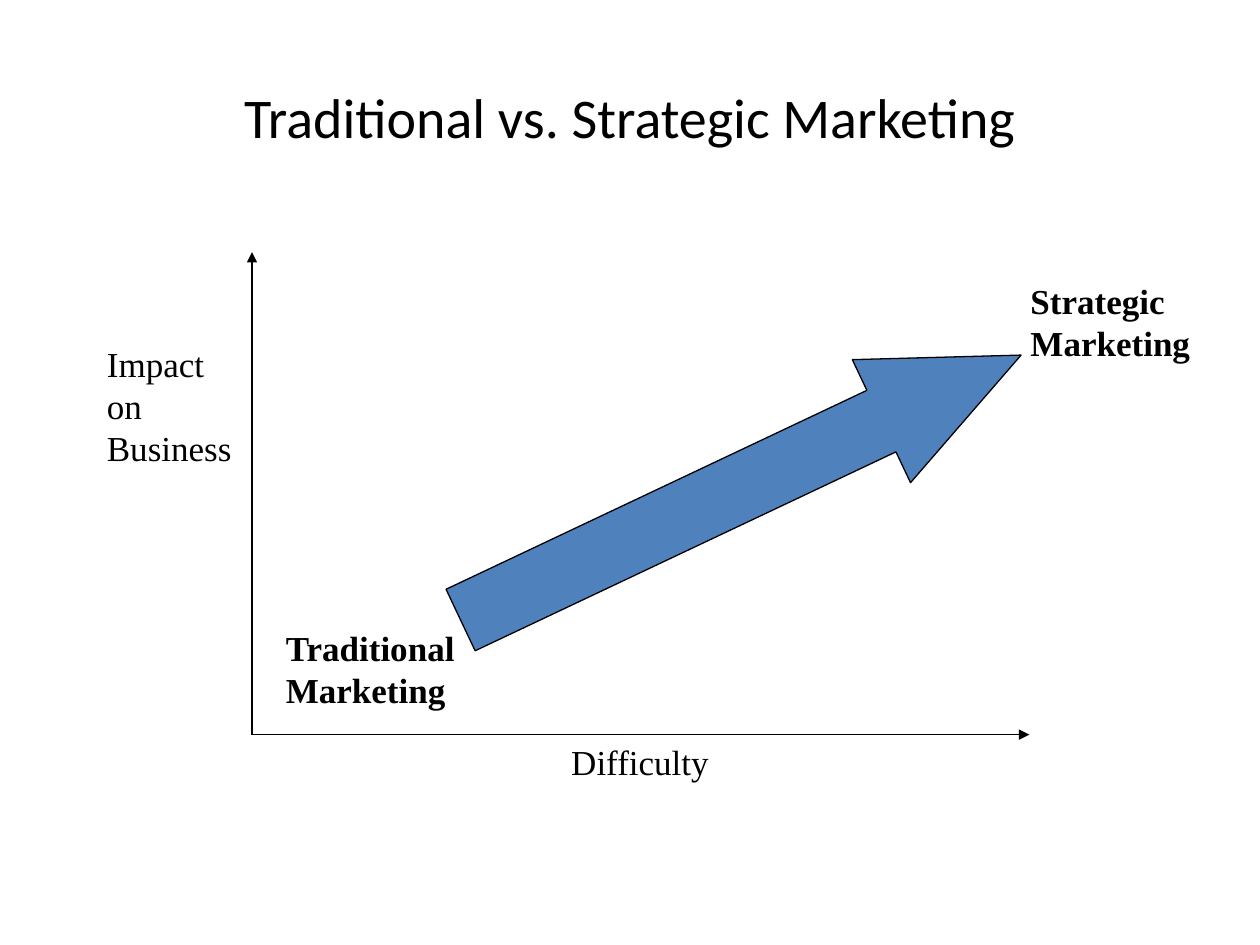
from lxml import etree
from pptx import Presentation
from pptx.dml.color import RGBColor
from pptx.enum.shapes import MSO_CONNECTOR, MSO_SHAPE
from pptx.enum.text import MSO_ANCHOR, PP_ALIGN
from pptx.oxml.ns import qn
from pptx.util import Inches, Pt

THEME = {
    "ink": RGBColor(0x00, 0x00, 0x00),
    "accent": RGBColor(0x4F, 0x81, 0xBD),
    "title_font": "Calibri",
    "label_font": "Times New Roman",
    "title_size": 32,
    "label_size": 20,
    "line_width": 0.75,
}

# Content: text, (left, top, width, height), format
TITLE = ("Traditional vs. Strategic Marketing", (0.5, 0.3, 9, 1.25))
LABELS = [
    ("Strategic Marketing", (8.08, 2.17, 1.59, 0.77), {"bold": True}),
    ("Traditional Marketing", (2.17, 4.92, 1.58, 0.77), {"bold": True}),
    ("Impact\von Business", (0.75, 2.67, 1.33, 1.1), {}),
    ("Difficulty", (3.33, 5.83, 3.5, 0.43), {"align": PP_ALIGN.CENTER}),
]
ORIGIN = (2, 5.83)
AXIS_ENDS = [(2, 2), (8.17, 5.83)]
ARROW_PLACE = (3.42, 3.33, 4.92, 1.08)
ARROW_ROTATION = 334.7
ARROW_SHAPE = (0.5, 1.135)


def add_text(page, text, place, *, font=THEME["label_font"],
             size=THEME["label_size"], bold=False,
             align=PP_ALIGN.LEFT, anchor=MSO_ANCHOR.TOP):
    box = page.shapes.add_textbox(*map(Inches, place))
    frame = box.text_frame
    frame.word_wrap = True
    frame.vertical_anchor = anchor
    para = frame.paragraphs[0]
    para.text = text
    para.alignment = align
    for span in para.runs:
        span.font.name = font
        span.font.size = Pt(size)
        span.font.bold = bold
        span.font.color.rgb = THEME["ink"]


def style_line(line):
    line.color.rgb = THEME["ink"]
    line.width = Pt(THEME["line_width"])


def add_axis(page, start, end):
    axis = page.shapes.add_connector(
        MSO_CONNECTOR.STRAIGHT, *map(Inches, start + end))
    style_line(axis.line)
    etree.SubElement(axis.line._get_or_add_ln(), qn("a:tailEnd"), type="triangle")
    etree.SubElement(axis._element.spPr, qn("a:effectLst"))


def add_growth_arrow(page):
    arrow = page.shapes.add_shape(
        MSO_SHAPE.RIGHT_ARROW, *map(Inches, ARROW_PLACE))
    arrow.rotation = ARROW_ROTATION
    for index, value in enumerate(ARROW_SHAPE):
        arrow.adjustments[index] = value
    arrow.shadow.inherit = False
    arrow.fill.solid()
    arrow.fill.fore_color.rgb = THEME["accent"]
    style_line(arrow.line)


def main():
    deck = Presentation()
    deck.slide_width, deck.slide_height = Inches(10), Inches(7.5)
    page = deck.slides.add_slide(deck.slide_layouts[6])

    # Title
    add_text(page, *TITLE, font=THEME["title_font"], size=THEME["title_size"],
             align=PP_ALIGN.CENTER, anchor=MSO_ANCHOR.MIDDLE)

    # Axes from the shared origin, then the arrow between the two approaches
    for end in AXIS_ENDS:
        add_axis(page, ORIGIN, end)
    add_growth_arrow(page)

    # Labels
    for text, place, style in LABELS:
        add_text(page, text, place, **style)

    deck.save("out.pptx")


if __name__ == "__main__":
    main()
